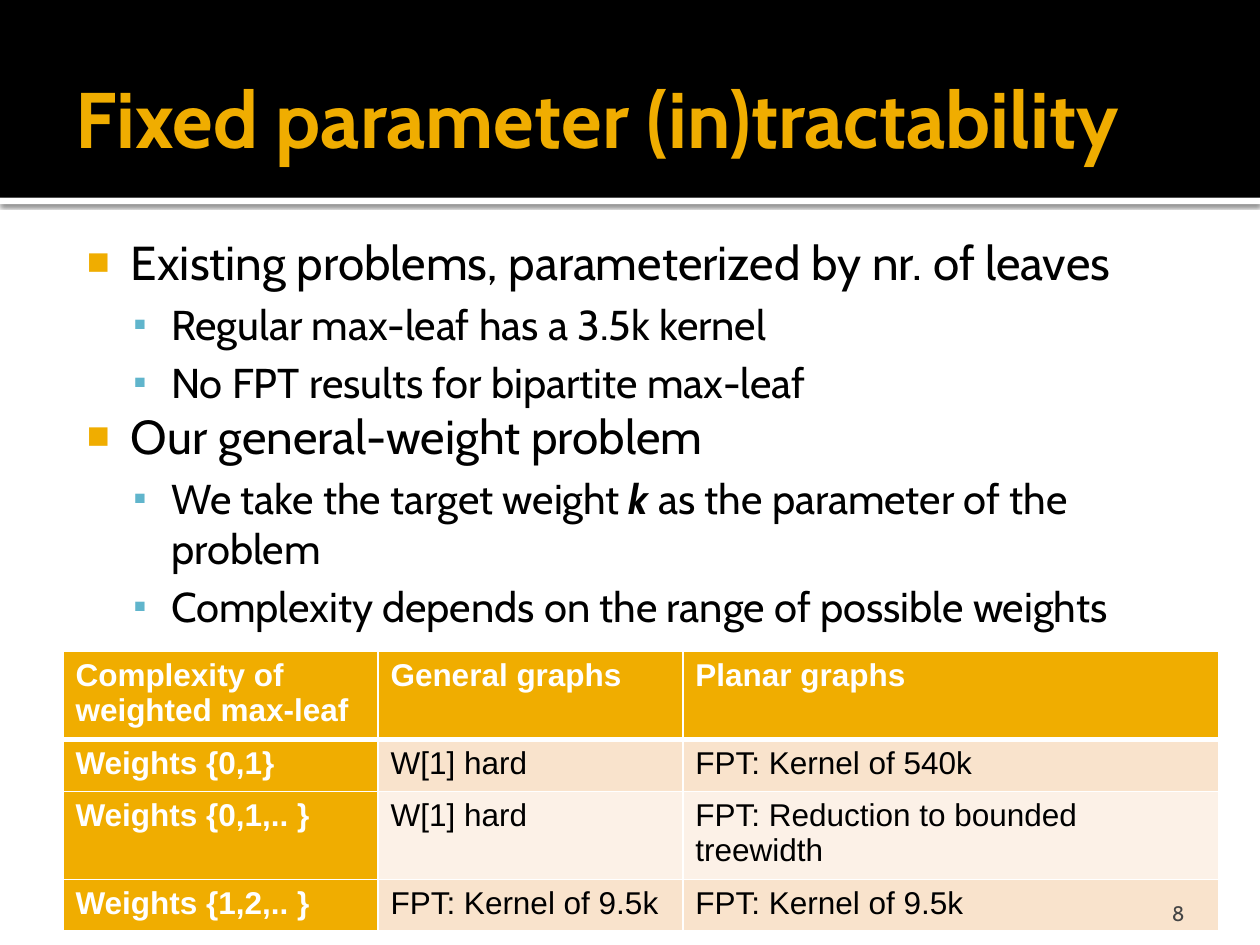
from lxml.etree import SubElement
from pptx import Presentation
from pptx.dml.color import RGBColor as Rgb
from pptx.enum.shapes import MSO_SHAPE as Shape
from pptx.enum.text import MSO_ANCHOR as Anchor, PP_ALIGN as Align
from pptx.oxml.ns import qn
from pptx.util import Inches, Pt

COLORS = {"gold": "F0AD00", "blue": "60B5CC", "black": "000000", "white": "FFFFFF",
          "gray": "454545", "band": "F9E3CC", "pale": "FCF1E7"}
GRID_COLUMNS, GRID_ROWS = 100, 75
UNIT = Inches(0.1)

LEVELS = [
    {"size": 27.2, "left": 0.48, "hang": 0.35, "before": 0, "mark": "■", "color": "gold", "scale": 80},
    {"size": 23.8, "left": 0.8, "hang": 0.3, "before": 20, "mark": "▪", "color": "blue", "scale": 90},
]
BULLETS = [
    (0, ["Existing problems, parameterized by nr. of leaves"]),
    (1, ["Regular max-leaf has a 3.5k kernel"]),
    (1, ["No FPT results for bipartite max-leaf"]),
    (0, ["Our general-weight problem"]),
    (1, ["We take the target weight ", "k", " as the parameter of the problem"]),
    (1, ["Complexity depends on the range of possible weights"]),
]
VARIABLE = "k"
COMPLEXITY = [
    ["Complexity of weighted max-leaf", "General graphs", "Planar graphs"],
    ["Weights {0,1}", "W[1] hard", "FPT: Kernel of 540k"],
    ["Weights {0,1,.. }", "W[1] hard", "FPT: Reduction to bounded treewidth"],
    ["Weights {1,2,.. }", "FPT: Kernel of 9.5k", "FPT: Kernel of 9.5k"],
]


def cells(*counts):
    """Turn counts of grid columns or rows into lengths."""
    return [round(count * UNIT) for count in counts]


def add(parent, tag, **attributes):
    """Append an XML child with the given attributes."""
    return SubElement(parent, qn(tag), {name: str(value) for name, value in attributes.items()})


def add_run(paragraph, text, size, color, font="Cabin", bold=False, italic=False):
    """Add one styled run to a paragraph."""
    run = paragraph.add_run()
    run.text = text
    run.font.size, run.font.name = Pt(size), font
    run.font.bold, run.font.italic = bold, italic
    run.font.color.rgb = Rgb.from_string(COLORS[color])


def add_band(slide, top, height, color):
    """Add a full-width rectangle without outline."""
    shape = slide.shapes.add_shape(Shape.RECTANGLE, *cells(0, top, GRID_COLUMNS, height))
    shape.shadow.inherit = False
    shape.fill.solid()
    shape.fill.fore_color.rgb = Rgb.from_string(COLORS[color])
    shape.line.fill.background()
    return shape


def cast_shadow(shape):
    """Give a shape a soft shadow straight below it."""
    effects = shape._element.spPr.find(qn("a:effectLst"))
    shadow = add(effects, "a:outerShdw", blurRad=Pt(2.5), dist=Pt(0.8), dir=90 * 60000,
                 algn="t", rotWithShape=0)
    add(add(shadow, "a:srgbClr", val=COLORS["black"]), "a:alpha", val=60000)


def add_text_frame(slide, box, insets, anchor=Anchor.TOP):
    """Add a wrapping text box and return its text frame."""
    frame = slide.shapes.add_textbox(*cells(*box)).text_frame
    frame.word_wrap, frame.vertical_anchor = True, anchor
    (frame.margin_left, frame.margin_top,
     frame.margin_right, frame.margin_bottom) = cells(*insets)
    return frame


def set_bullet(paragraph, level):
    """Set indent, spacing and marker for an outline level."""
    properties = paragraph._p.get_or_add_pPr()
    properties.set("marL", str(Inches(level["left"])))
    properties.set("indent", str(-Inches(level["hang"])))
    add(add(properties, "a:spcBef"), "a:spcPct", val=level["before"] * 1000)
    add(add(properties, "a:buClr"), "a:srgbClr", val=COLORS[level["color"]])
    add(properties, "a:buSzPct", val=level["scale"] * 1000)
    add(properties, "a:buFont", typeface="Arial")
    add(properties, "a:buChar", char=level["mark"])


def add_outline(slide, box):
    """Add the two-level bulleted outline."""
    frame = add_text_frame(slide, box, (0.6, 1, 1, 0.5))
    for index, (depth, texts) in enumerate(BULLETS):
        paragraph = frame.add_paragraph() if index else frame.paragraphs[0]
        paragraph.level = depth
        set_bullet(paragraph, LEVELS[depth])
        for text in texts:
            strong = text == VARIABLE
            add_run(paragraph, text, LEVELS[depth]["size"], "black", bold=strong, italic=strong)


def set_borders(cell, widths):
    """Draw white cell borders with the given widths by side."""
    properties = cell._tc.get_or_add_tcPr()
    for index, (side, width) in enumerate(widths.items()):
        line = add(properties, f"a:ln{side}", w=Pt(width))
        add(add(line, "a:solidFill"), "a:srgbClr", val=COLORS["white"])
        properties.insert(index, line)


def add_complexity_table(slide, box, widths, heights):
    """Add the table with a gold header row and first column."""
    graphic = slide.shapes.add_table(len(heights), len(widths), *cells(*box))
    table = graphic.table
    for column, width in zip(table.columns, cells(*widths)):
        column.width = width
    for row, height in zip(table.rows, cells(*heights)):
        row.height = height
    graphic.height = cells(box[3])[0]
    for i, texts in enumerate(COMPLEXITY):
        for j, text in enumerate(texts):
            cell, heading = table.cell(i, j), i == 0 or j == 0
            cell.fill.solid()
            fill = "gold" if heading else ("band" if i % 2 else "pale")
            cell.fill.fore_color.rgb = Rgb.from_string(COLORS[fill])
            set_borders(cell, {"L": 1, "R": 1, "T": 3 if i == 1 else 1, "B": 1 if i else 3})
            add_run(cell.text_frame.paragraphs[0], text, 18,
                    "white" if heading else "black", "Arial", heading)


def main():
    """Build the slide and save it."""
    presentation = Presentation()
    presentation.slide_width, presentation.slide_height = cells(GRID_COLUMNS, GRID_ROWS)
    slide = presentation.slides.add_slide(presentation.slide_layouts[6])
    cast_shadow(add_band(slide, 15.7, 0.5, "white"))
    add_band(slide, 0, 15.7, "black")
    title = add_text_frame(slide, (5, 3, 90, 12.5), (1, 0.5, 0.5, 0.5), Anchor.MIDDLE)
    add_run(title.paragraphs[0], "Fixed parameter (in)tractability", 45, "gold", bold=True)
    add_outline(slide, (5, 17.5, 90, 33.3))
    add_complexity_table(slide, (5, 51.7, 91.7, 19.2), (25, 24.2, 42.5), (5, 4.1, 4.1, 4.1))
    number = add_text_frame(slide, (71.7, 68.3, 23.3, 5.2), (1, 0.5, 1, 0), Anchor.BOTTOM)
    number.paragraphs[0].alignment = Align.RIGHT
    add_run(number.paragraphs[0], "8", 12, "gray")
    presentation.save("out.pptx")


if __name__ == "__main__":
    main()
